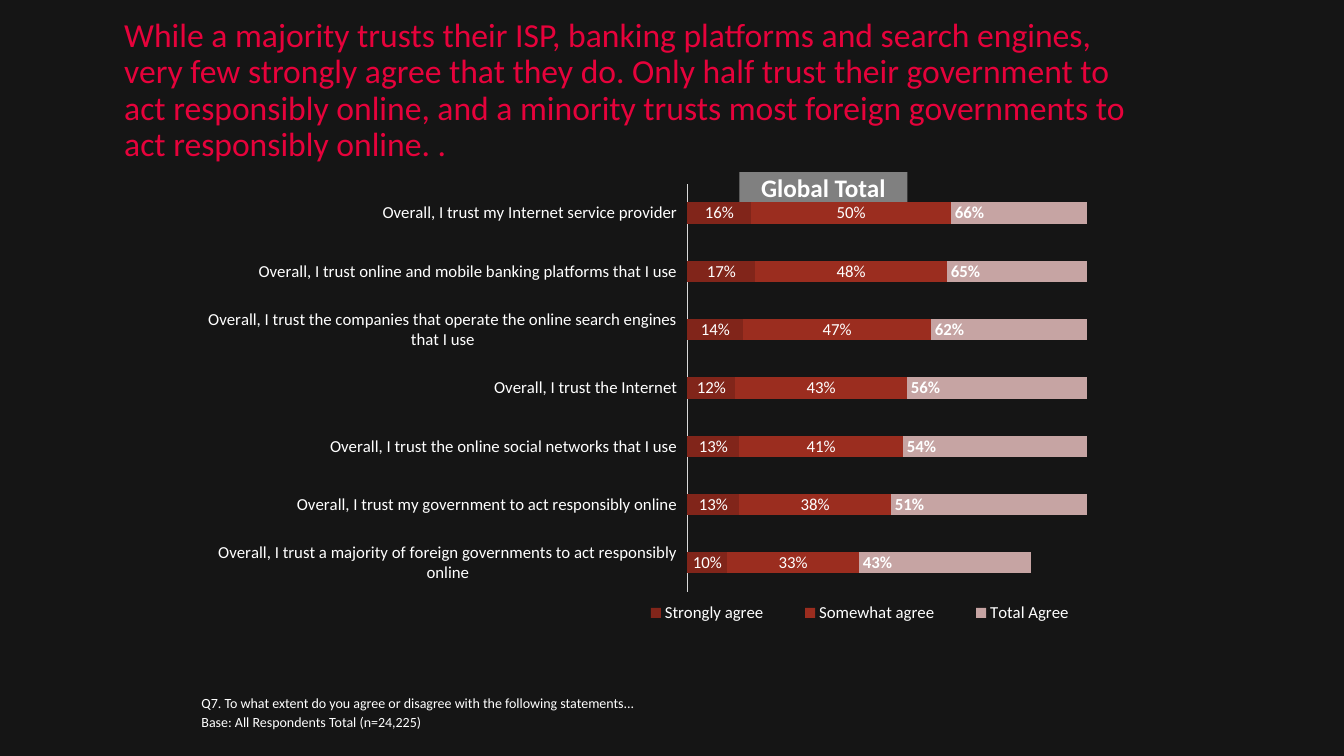
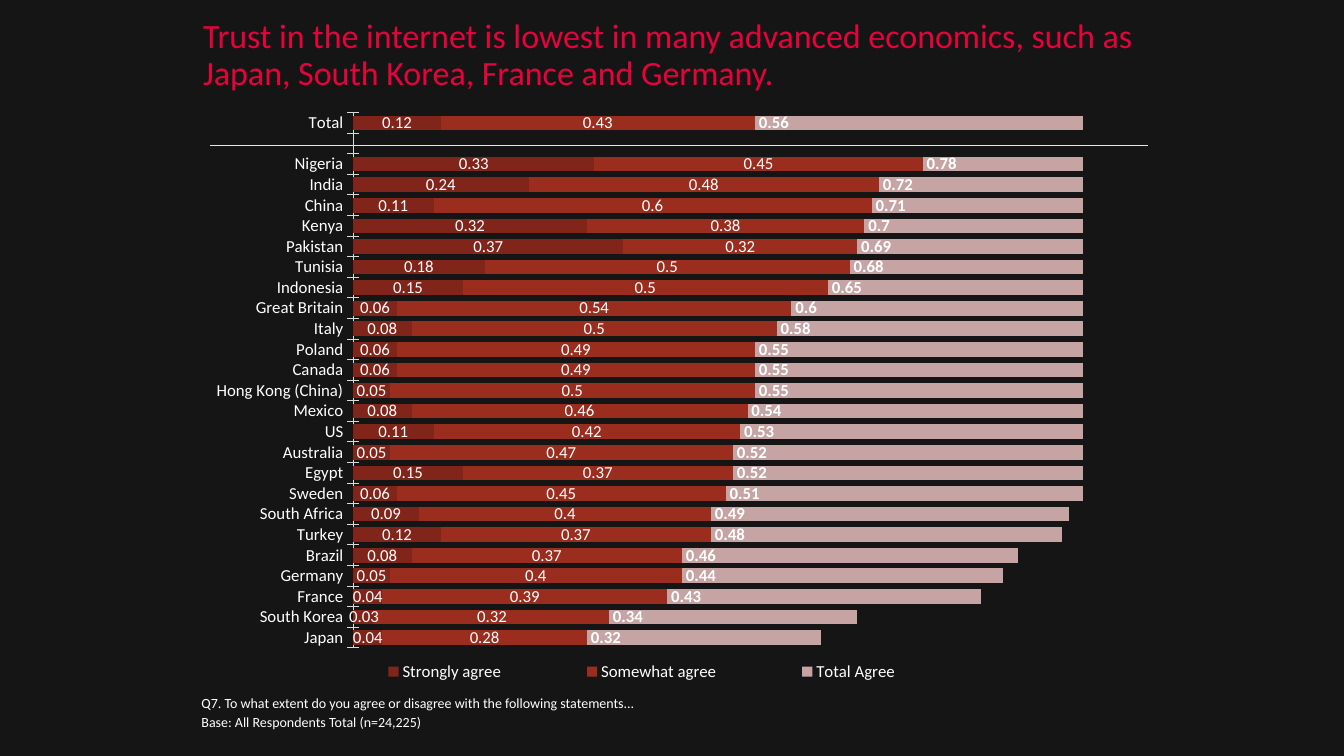
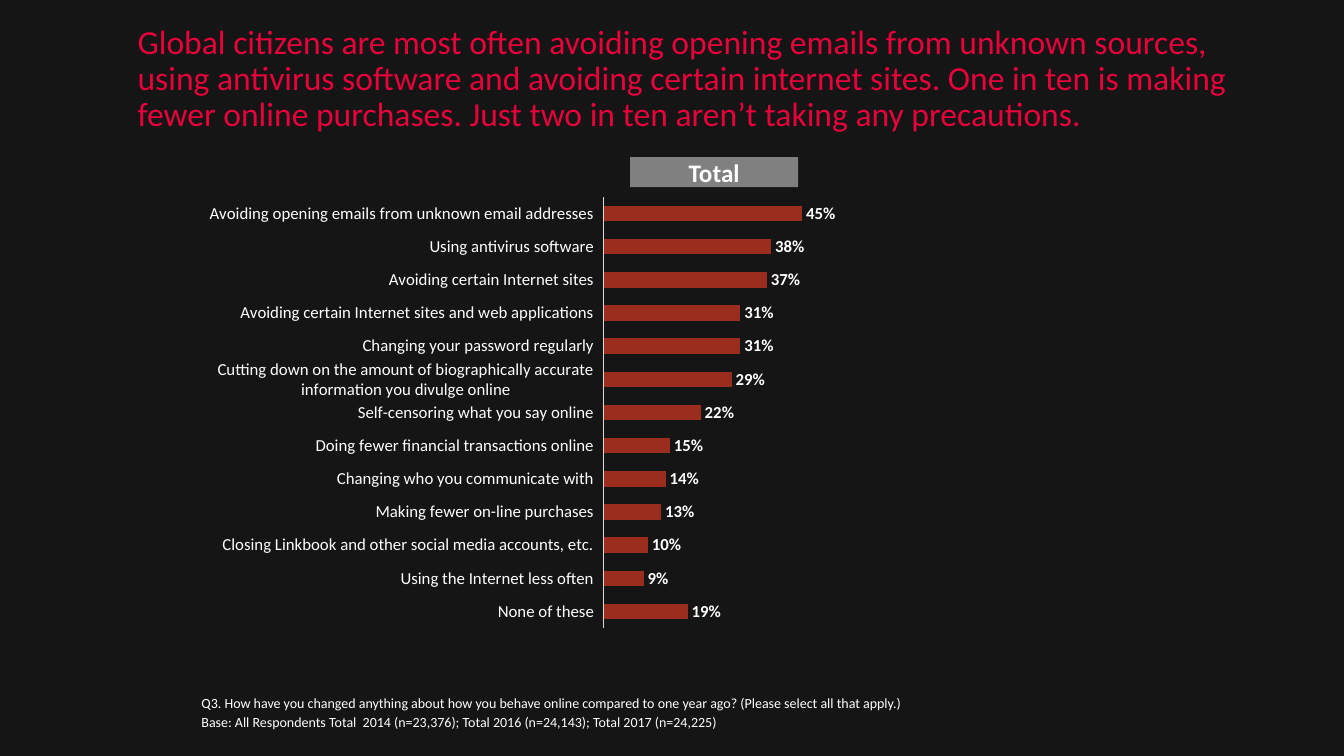
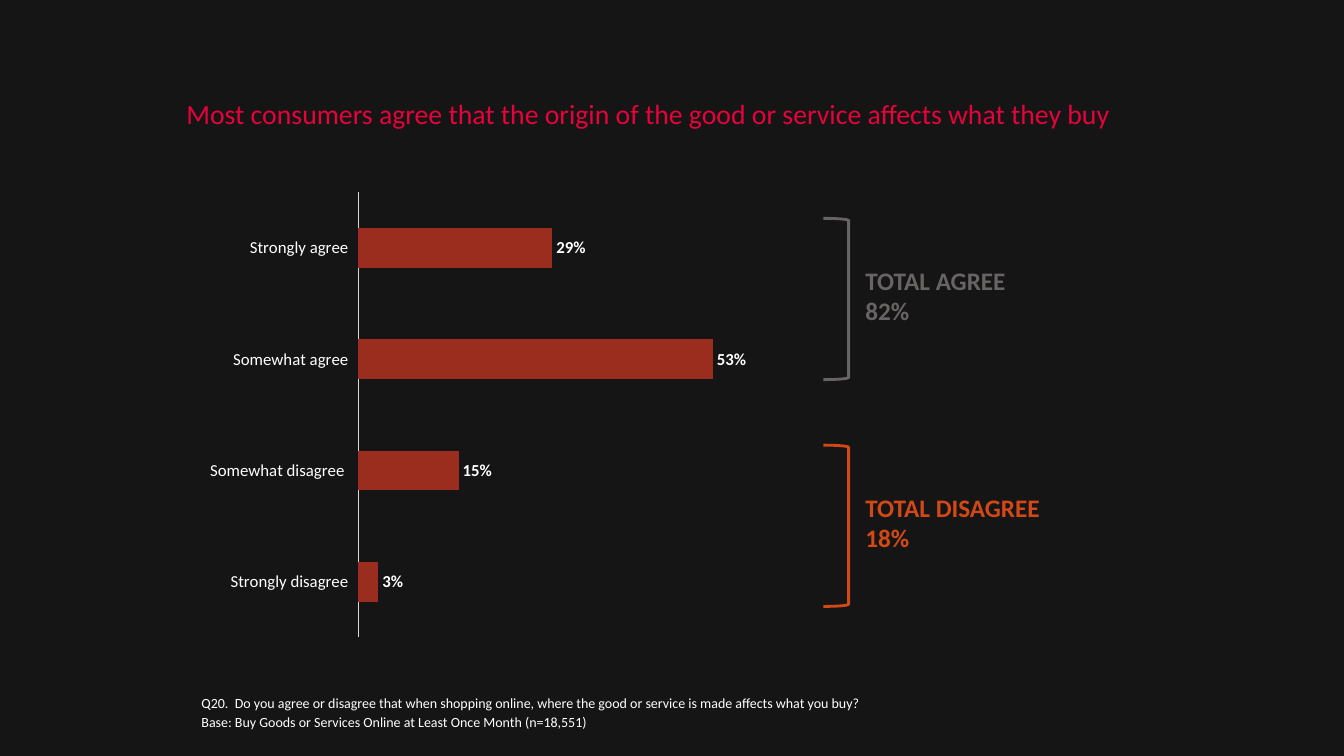
from lxml.etree import SubElement
from pptx import Presentation
from pptx.chart.data import CategoryChartData
from pptx.dml.color import RGBColor
from pptx.enum.chart import (XL_CHART_TYPE, XL_LABEL_POSITION,
                             XL_LEGEND_POSITION, XL_TICK_LABEL_POSITION, XL_TICK_MARK)
from pptx.enum.shapes import MSO_CONNECTOR, MSO_SHAPE
from pptx.enum.text import MSO_ANCHOR, PP_ALIGN
from pptx.oxml.ns import qn
from pptx.util import Inches, Pt

# Shared style
FONT = "Calibri"
BACKGROUND, TITLE, WHITE = "151515", "E6023B", "FFFFFF"
DARK_RED, RED, PINK = "81251A", "9B2D1F", "C6A4A3"
BADGE, AXIS, DIVIDER = "808080", "D9D9D9", "E9E5DC"
GREY, ORANGE = "696464", "D34817"

# Every box is (column, row, columns, rows) on a 16 by 9 grid
WIDTH, HEIGHT = 13.33, 7.5
CELL = HEIGHT / 9
FOOTNOTE_BOX = (2.28, 8.22, 9.53, 0.54)
BAR_CHART_BOX = (2.35, 2.18, 10.08, 5.52)

TRUST_QUESTION = ("Q7. To what extent do you agree or disagree with the following statements...\n"
                  "Base: All Respondents Total (n=24,225)")
AGREEMENT = ("Strongly agree", "Somewhat agree", "Total Agree")

TRUST_ROWS = [
    ("Overall, I trust my Internet service provider", 0.16, 0.5, 0.66),
    ("Overall, I trust online and mobile banking platforms that I use", 0.17, 0.48, 0.65),
    ("Overall, I trust the companies that operate the online search engines that I use",
     0.14, 0.47, 0.62),
    ("Overall, I trust the Internet", 0.12, 0.43, 0.56),
    ("Overall, I trust the online social networks that I use", 0.13, 0.41, 0.54),
    ("Overall, I trust my government to act responsibly online", 0.13, 0.38, 0.51),
    ("Overall, I trust a majority of foreign governments to act responsibly online",
     0.1, 0.33, 0.43),
]
COUNTRY_ROWS = [
    ("Total", 0.12, 0.43, 0.56),
    ("", None, None, None),
    ("Nigeria", 0.33, 0.45, 0.78),
    ("India", 0.24, 0.48, 0.72),
    ("China", 0.11, 0.6, 0.71),
    ("Kenya", 0.32, 0.38, 0.7),
    ("Pakistan", 0.37, 0.32, 0.69),
    ("Tunisia", 0.18, 0.5, 0.68),
    ("Indonesia", 0.15, 0.5, 0.65),
    ("Great Britain", 0.06, 0.54, 0.6),
    ("Italy", 0.08, 0.5, 0.58),
    ("Poland", 0.06, 0.49, 0.55),
    ("Canada", 0.06, 0.49, 0.55),
    ("Hong Kong (China)", 0.05, 0.5, 0.55),
    ("Mexico", 0.08, 0.46, 0.54),
    ("US", 0.11, 0.42, 0.53),
    ("Australia", 0.05, 0.47, 0.52),
    ("Egypt", 0.15, 0.37, 0.52),
    ("Sweden", 0.06, 0.45, 0.51),
    ("South Africa", 0.09, 0.4, 0.49),
    ("Turkey", 0.12, 0.37, 0.48),
    ("Brazil", 0.08, 0.37, 0.46),
    ("Germany", 0.05, 0.4, 0.44),
    ("France", 0.04, 0.39, 0.43),
    ("South Korea", 0.03, 0.32, 0.34),
    ("Japan", 0.04, 0.28, 0.32),
]
PRECAUTION_ROWS = [
    ("Avoiding opening emails from unknown email addresses", 0.45),
    ("Using antivirus software", 0.38),
    ("Avoiding certain Internet sites", 0.37),
    ("Avoiding certain Internet sites and web applications", 0.31),
    ("Changing your password regularly", 0.31),
    ("Cutting down on the amount of biographically accurate information you divulge online",
     0.29),
    ("Self-censoring what you say online", 0.22),
    ("Doing fewer financial transactions online", 0.15),
    ("Changing who you communicate with", 0.14),
    ("Making fewer on-line purchases", 0.13),
    ("Closing Linkbook and other social media accounts, etc.", 0.1),
    ("Using the Internet less often", 0.09),
    ("None of these", 0.19),
]
ORIGIN_ROWS = [
    ("Strongly agree", 0.29),
    ("Somewhat agree", 0.53),
    ("Somewhat disagree ", 0.15),
    ("Strongly disagree", 0.03),
]


def color(value):
    return RGBColor.from_string(value)


def grid(*cells):
    return [Inches(cell * CELL) for cell in cells]


def style_font(font, size, fill=WHITE, bold=False):
    font.name, font.size, font.bold = FONT, Pt(size), bold
    font.color.rgb = color(fill)


def write(shape, text, size, fill=WHITE, bold=False, align=PP_ALIGN.LEFT,
          anchor=MSO_ANCHOR.TOP, spacing=1.0, before=0, inset=None):
    """Fill a shape with one paragraph for each line of text."""
    frame = shape.text_frame
    frame.word_wrap = True
    frame.vertical_anchor = anchor
    if inset is not None:
        frame.margin_left = frame.margin_right = Inches(inset)
        frame.margin_top = frame.margin_bottom = Inches(inset)
    for index, line in enumerate(text.split("\n")):
        paragraph = frame.add_paragraph() if index else frame.paragraphs[0]
        paragraph.alignment = align
        paragraph.line_spacing = spacing
        paragraph.space_before = Pt(before)
        run = paragraph.add_run()
        run.text = line
        style_font(run.font, size, fill, bold)


def add_text(slide, box, text, size, **style):
    write(slide.shapes.add_textbox(*grid(*box)), text, size, **style)


def add_page(presentation, title, title_box, footnote, title_size=24):
    """Blank slide with the shared title and footnote."""
    slide = presentation.slides.add_slide(presentation.slide_layouts[6])
    add_text(slide, FOOTNOTE_BOX, footnote, 10, anchor=MSO_ANCHOR.BOTTOM,
             spacing=0.95, before=2)
    add_text(slide, title_box, title, title_size, fill=TITLE,
             anchor=MSO_ANCHOR.MIDDLE, spacing=0.9)
    return slide


def add_badge(slide, column, row, text):
    badge = slide.shapes.add_shape(MSO_SHAPE.RECTANGLE, *grid(column, row, 2, 0.36))
    badge.shadow.inherit = False
    badge.fill.solid()
    badge.fill.fore_color.rgb = color(BADGE)
    badge.line.fill.background()
    write(badge, text, 18, bold=True, align=PP_ALIGN.CENTER,
          anchor=MSO_ANCHOR.MIDDLE, inset=0)


def set_layout(parent, index, shares, inner=False):
    """Place a chart part by its shares (x, y, w, h) of the chart box."""
    for old in parent.findall(qn("c:layout")):
        parent.remove(old)
    layout = SubElement(parent, qn("c:layout"))
    parent.insert(index, layout)
    manual = SubElement(layout, qn("c:manualLayout"))
    settings = [("layoutTarget", "inner")] if inner else []
    settings += [("xMode", "edge"), ("yMode", "edge"), *zip("xywh", shares)]
    for tag, value in settings:
        SubElement(manual, qn(f"c:{tag}")).set("val", str(value))


def add_bars(slide, box, rows, names, fills, plot_area, gap, legend_area=None,
             number_format="0%", tick=XL_TICK_MARK.NONE):
    """Horizontal bars, stacked when there are several series."""
    stacked = len(names) > 1
    categories, *columns = zip(*rows)
    data = CategoryChartData()
    data.categories = categories
    for name, values in zip(names, columns):
        data.add_series(name, values)
    kind = XL_CHART_TYPE.BAR_STACKED if stacked else XL_CHART_TYPE.BAR_CLUSTERED
    chart = slide.shapes.add_chart(kind, *grid(*box), data).chart
    style_font(chart.font, 12)
    chart.has_title = False
    set_layout(chart._chartSpace.chart.plotArea, 0, plot_area, inner=True)

    # Axes
    axis = chart.category_axis
    axis.reverse_order = True
    axis.major_tick_mark, axis.minor_tick_mark = tick, XL_TICK_MARK.NONE
    axis.tick_label_position = XL_TICK_LABEL_POSITION.LOW
    axis.format.line.color.rgb = color(AXIS)
    axis.format.line.width = Pt(0.75)
    style_font(axis.tick_labels.font, 12)
    values_axis = chart.value_axis
    values_axis.minimum_scale, values_axis.maximum_scale = 0, 1
    values_axis.has_major_gridlines = False
    values_axis.visible = False

    # Bars and labels
    plot = chart.plots[0]
    plot.vary_by_categories = False
    plot.gap_width = gap
    plot.overlap = 100 if stacked else 0
    for series, fill in zip(plot.series, fills):
        series.format.fill.solid()
        series.format.fill.fore_color.rgb = color(fill)
        last = series.name == names[-1]
        labels = series.data_labels
        labels.show_value = True
        labels.number_format = number_format
        labels.number_format_is_linked = False
        style_font(labels.font, 12, bold=last)
        if last:
            labels.position = (XL_LABEL_POSITION.INSIDE_BASE if stacked
                               else XL_LABEL_POSITION.OUTSIDE_END)

    # Legend
    chart.has_legend = legend_area is not None
    if legend_area:
        chart.legend.position = XL_LEGEND_POSITION.BOTTOM
        chart.legend.include_in_layout = False
        style_font(chart.legend.font, 12)
        set_layout(chart.legend._element, 1, legend_area)


def add_divider(slide, left, right, row):
    line = slide.shapes.add_connector(MSO_CONNECTOR.STRAIGHT, *grid(left, row, right, row))
    line.line.color.rgb = color(DIVIDER)
    line.line.width = Pt(1)
    SubElement(line._element.spPr, qn("a:effectLst"))


def add_bracket(slide, column, row, text, fill):
    """Bracket with its total to the right."""
    bracket = slide.shapes.add_shape(MSO_SHAPE.RIGHT_BRACKET, *grid(column, row, 0.3, 1.92))
    bracket.shadow.inherit = False
    bracket.fill.background()
    bracket.line.color.rgb = color(fill)
    bracket.line.width = Pt(2)
    add_text(slide, (column + 0.5, row + 0.56, 3, 0.73), text, 18,
             fill=fill, bold=True, inset=0)


def trust_slide(presentation):
    slide = add_page(
        presentation,
        "While a majority trusts their ISP, banking platforms and search engines, very few "
        "strongly agree that they do. Only half trust their government to act responsibly "
        "online, and a minority trusts most foreign governments to act responsibly online. .",
        (1.36, 0.54, 12.28, 1.09), TRUST_QUESTION)
    add_badge(slide, 8.8, 2.05, "Global Total")
    add_bars(slide, (2.35, 2.08, 10.8, 5.52), TRUST_ROWS, AGREEMENT, (DARK_RED, RED, PINK),
             plot_area=(0.54, 0.02, 0.44, 0.88), gap=175,
             legend_area=(0.46, 0.91, 0.54, 0.07))


def country_slide(presentation):
    slide = add_page(
        presentation,
        "Trust in the internet is lowest in many advanced economics, such as Japan, "
        "South Korea, France and Germany.",
        (2.3, 0.3, 11.35, 0.73), TRUST_QUESTION, title_size=24.3)
    add_divider(slide, 2.5, 13.66, 1.73)
    add_bars(slide, (2.38, 1.2, 10.73, 7.08), COUNTRY_ROWS, AGREEMENT, (DARK_RED, RED, PINK),
             plot_area=(0.17, 0.02, 0.81, 0.9), gap=40,
             legend_area=(0.12, 0.93, 0.74, 0.06),
             number_format="General", tick=XL_TICK_MARK.CROSS)


def precaution_slide(presentation):
    slide = add_page(
        presentation,
        "Global citizens are most often avoiding opening emails from unknown sources, using "
        "antivirus software and avoiding certain internet sites. One in ten is making fewer "
        "online purchases. Just two in ten aren’t taking any precautions.",
        (1.52, 0.29, 13.55, 1.32),
        "Q3. How have you changed anything about how you behave online compared to one year "
        "ago? (Please select all that apply.)\n"
        "Base: All Respondents Total  2014 (n=23,376); Total 2016 (n=24,143); "
        "Total 2017 (n=24,225)")
    add_badge(slide, 7.5, 1.87, "Total")
    add_bars(slide, BAR_CHART_BOX, PRECAUTION_ROWS, ["Series 1"], [RED],
             plot_area=(0.48, 0.03, 0.52, 0.93), gap=115)


def origin_slide(presentation):
    slide = add_page(
        presentation,
        "Most consumers agree that the origin of the good or service affects what they buy",
        (2.1, 1.2, 11.35, 0.36),
        "Q20.  Do you agree or disagree that when shopping online, where the good or service "
        "is made affects what you buy?\n"
        "Base: Buy Goods or Services Online at Least Once Month (n=18,551)",
        title_size=19.8)
    add_bars(slide, BAR_CHART_BOX, ORIGIN_ROWS, ["Series 1"], [RED],
             plot_area=(0.19, 0.02, 0.79, 0.96), gap=181)
    totals = (("TOTAL AGREE\n82%", GREY), ("TOTAL DISAGREE\n18%", ORANGE))
    for index, (text, fill) in enumerate(totals):
        add_bracket(slide, 9.8, 2.6 + 2.7 * index, text, fill)


def main():
    presentation = Presentation()
    presentation.slide_width, presentation.slide_height = Inches(WIDTH), Inches(HEIGHT)
    background = presentation.slide_master.background.fill
    background.solid()
    background.fore_color.rgb = color(BACKGROUND)
    for build in (trust_slide, country_slide, precaution_slide, origin_slide):
        build(presentation)
    presentation.save("out.pptx")


if __name__ == "__main__":
    main()
